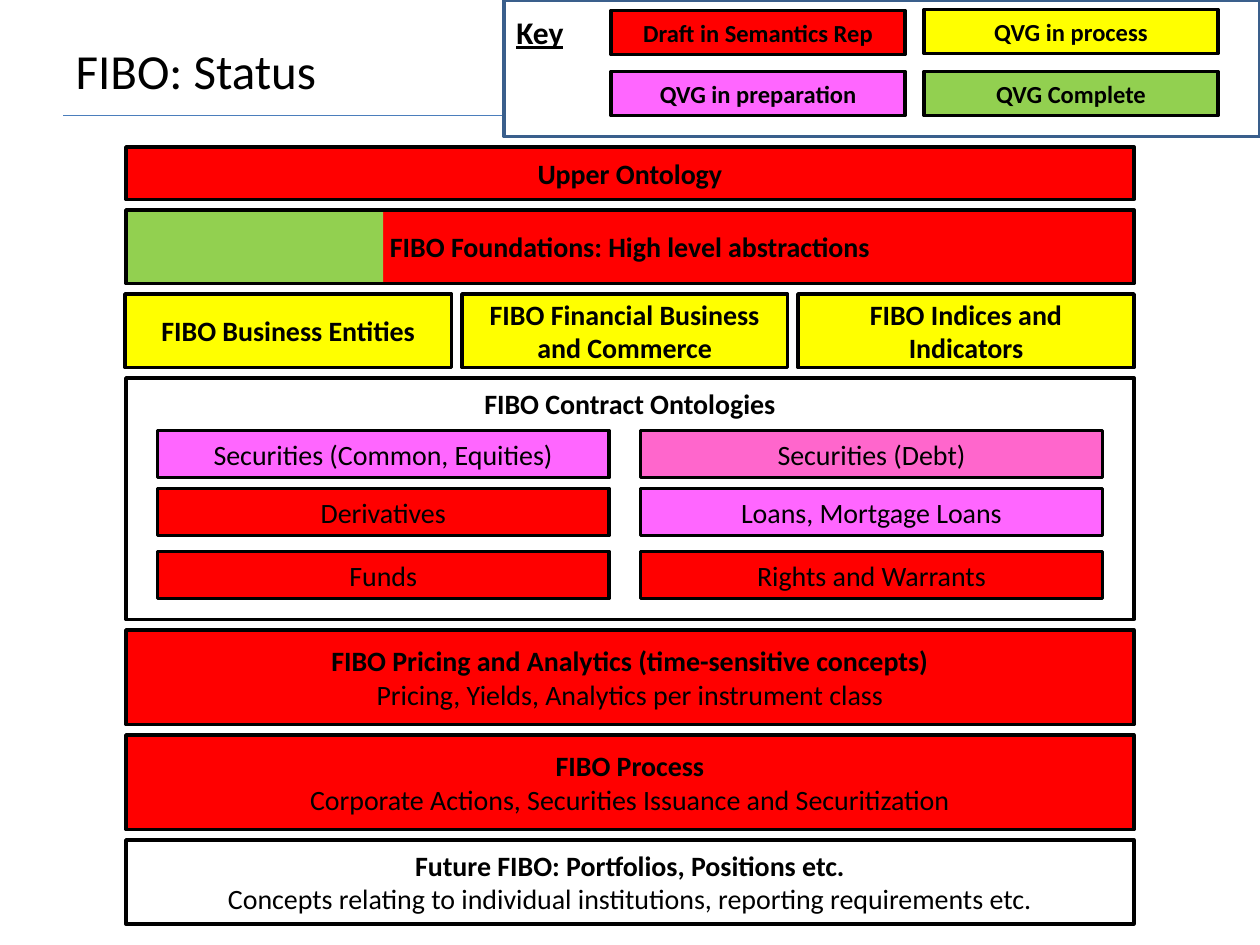
from pptx import Presentation
from pptx.dml.color import RGBColor
from pptx.enum.shapes import MSO_CONNECTOR, MSO_SHAPE
from pptx.enum.text import MSO_ANCHOR, MSO_AUTO_SIZE, PP_ALIGN
from pptx.oxml.ns import qn
from pptx.util import Inches, Pt
from lxml.etree import SubElement

FONT = "Calibri"
BLACK = RGBColor(0, 0, 0)
WHITE = RGBColor(255, 255, 255)
RED = RGBColor(255, 0, 0)
YELLOW = RGBColor(255, 255, 0)
GREEN = RGBColor(0x92, 0xD0, 0x50)
PINK = RGBColor(0xFF, 0x66, 0xFF)
ROSE = RGBColor(0xFF, 0x66, 0xCC)
NAVY = RGBColor(0x3A, 0x5F, 0x8C)
BLUE = RGBColor(0x4B, 0x7E, 0xBC)

LEFT, FULL = 12, 96


def grid(units):
    return Inches(units / 12)


def format_paragraph(paragraph, text, size, bold=False, align=PP_ALIGN.CENTER):
    paragraph.text = text
    paragraph.alignment = align
    paragraph.font.name = FONT
    paragraph.font.size = Pt(size)
    paragraph.font.bold = bold
    paragraph.font.color.rgb = BLACK


def add_box(slide, area, fill, heading="", detail="", size=16, bold=True,
            line=BLACK, align=PP_ALIGN.CENTER):
    shape = slide.shapes.add_shape(MSO_SHAPE.RECTANGLE, *map(grid, area))
    shape.shadow.inherit = False
    if fill is None:
        shape.fill.background()
    else:
        shape.fill.solid()
        shape.fill.fore_color.rgb = fill
    if line is None:
        shape.line.fill.background()
    else:
        shape.line.color.rgb = line
        shape.line.width = Pt(2)
    frame = shape.text_frame
    frame.word_wrap = True
    frame.vertical_anchor = MSO_ANCHOR.MIDDLE
    if heading:
        format_paragraph(frame.paragraphs[0], heading, size, bold, align)
    if detail:
        format_paragraph(frame.add_paragraph(), detail, size)
    return shape


def anchor_top(shape, margin):
    shape.text_frame.vertical_anchor = MSO_ANCHOR.TOP
    shape.text_frame.margin_top = Inches(margin)


def add_title(slide, text):
    title = slide.shapes.title
    title.left, title.top = grid(6), grid(3)
    title.width, title.height = grid(108), grid(7.4)
    frame = title.text_frame
    frame.auto_size = MSO_AUTO_SIZE.NONE
    frame.vertical_anchor = MSO_ANCHOR.MIDDLE
    format_paragraph(frame.paragraphs[0], text, 28, align=PP_ALIGN.LEFT)
    rule = slide.shapes.add_connector(
        MSO_CONNECTOR.STRAIGHT, grid(6), grid(11), grid(114), grid(11))
    rule.line.color.rgb = BLUE
    rule.line.width = Pt(0.75)
    SubElement(rule._element.spPr, qn("a:effectLst"))


def add_foundations(slide):
    add_box(slide, (36.5, 20, 71.5, 7), RED, line=None)
    add_box(slide, (LEFT, 20, 24.5, 7), GREEN, line=None)
    add_box(slide, (LEFT, 20, FULL, 7), None,
            "FIBO Foundations: High level abstractions")


def add_domains(slide):
    domains = [
        (11.9, 31.1, "FIBO Business Entities"),
        (44, 31, "FIBO Financial Business and Commerce"),
        (76, 32, "FIBO Indices and Indicators"),
    ]
    for left, width, text in domains:
        add_box(slide, (left, 28, width, 7), YELLOW, text)


def add_contracts(slide):
    panel = add_box(slide, (LEFT, 36, FULL, 23), WHITE, "FIBO Contract Ontologies")
    anchor_top(panel, 0.07)
    columns = [(15, 43), (61, 44)]
    rows = [
        (41, [("Securities (Common, Equities)", PINK), ("Securities (Debt)", ROSE)]),
        (46.5, [("Derivatives", RED), ("Loans, Mortgage Loans", PINK)]),
        (52.5, [("Funds", RED), ("Rights and Warrants", RED)]),
    ]
    for top, contracts in rows:
        for (left, width), (text, fill) in zip(columns, contracts):
            add_box(slide, (left, top, width, 4.5), fill, text, bold=False)


def add_key(slide):
    panel = add_box(slide, (48, 0, 72, 13), WHITE, "Key", size=18, line=NAVY,
                    align=PP_ALIGN.LEFT)
    anchor_top(panel, 0.1)
    panel.text_frame.paragraphs[0].font.underline = True
    entries = [
        (58.2, 1, "Draft in Semantics Rep", RED),
        (88, 0.9, "QVG in process", YELLOW),
        (58.2, 6.8, "QVG in preparation", PINK),
        (88, 6.8, "QVG Complete", GREEN),
    ]
    for left, top, text, fill in entries:
        add_box(slide, (left, top, 28, 4.2), fill, text, size=14)


def main():
    presentation = Presentation()
    presentation.slide_width, presentation.slide_height = Inches(10), Inches(7.5)
    slide = presentation.slides.add_slide(presentation.slide_layouts[5])
    add_title(slide, "FIBO: Status")
    add_box(slide, (LEFT, 14, FULL, 5), RED, "Upper Ontology")
    add_foundations(slide)
    add_domains(slide)
    add_contracts(slide)
    layers = [
        (60, 9, RED, "FIBO Pricing and Analytics (time-sensitive concepts)",
         "Pricing, Yields, Analytics per instrument class"),
        (70, 9, RED, "FIBO Process",
         "Corporate Actions, Securities Issuance and Securitization"),
        (80, 8, WHITE, "Future FIBO: Portfolios, Positions etc.",
         "Concepts relating to individual institutions, reporting requirements etc."),
    ]
    for top, height, fill, heading, detail in layers:
        add_box(slide, (LEFT, top, FULL, height), fill, heading, detail)
    add_key(slide)
    presentation.save("out.pptx")


if __name__ == "__main__":
    main()
